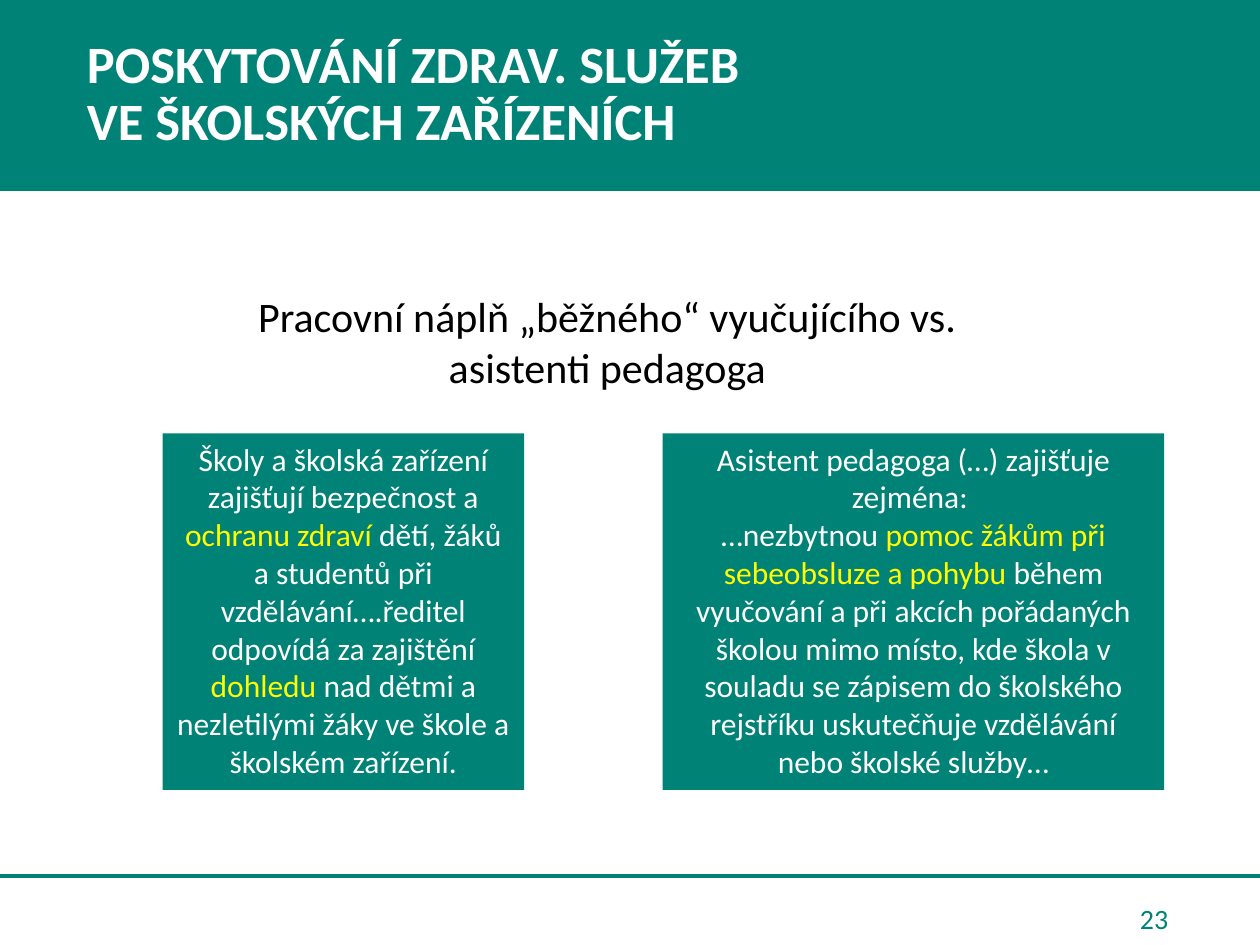
import lxml.etree
import pptx
import pptx.dml.color
import pptx.enum.shapes
import pptx.enum.text
import pptx.oxml.ns
import pptx.util

PX = 9144  # EMU per px, 100 px to the inch
FONT = "Calibri"
COLORS = {"teal": "008276", "white": "FFFFFF", "black": "000000", "yellow": "FFFF00"}
ALIGN = pptx.enum.text.PP_ALIGN
ANCHOR = pptx.enum.text.MSO_ANCHOR
AUTO = pptx.enum.text.MSO_AUTO_SIZE


def px(*lengths):
    return [pptx.util.Emu(n * PX) for n in lengths]


def rgb(name):
    return pptx.dml.color.RGBColor.from_string(COLORS[name])


def style(font, size, color, bold=False):
    font.name, font.size, font.bold = FONT, pptx.util.Pt(size), bold
    font.color.rgb = rgb(color)


def write(tf, paragraphs, size, align, anchor=ANCHOR.TOP):
    """Fill a text frame; each paragraph is a list of (text, colour) runs."""
    tf.word_wrap, tf.auto_size, tf.vertical_anchor = True, AUTO.NONE, anchor
    for i, runs in enumerate(paragraphs):
        p = tf.add_paragraph() if i else tf.paragraphs[0]
        p.alignment = align
        for text, color in runs:
            r = p.add_run()
            r.text = text
            style(r.font, size, color)


def add_rect(s, box):
    sp = s.shapes.add_shape(pptx.enum.shapes.MSO_SHAPE.RECTANGLE, *px(*box))
    sp.shadow.inherit = False
    sp.fill.solid()
    sp.fill.fore_color.rgb = rgb("teal")
    sp.line.fill.background()
    return sp


def add_text(s, box, text, size, color, align, anchor=ANCHOR.TOP):
    sp = s.shapes.add_textbox(*px(*box))
    write(sp.text_frame, [[(text, color)]], size, align, anchor)


def add_header(s, box, lines):
    left, top, width, height = box
    band = add_rect(s, (left, top, width + 4, height))
    band.line.color.rgb = rgb("teal")
    band.line.width = pptx.util.Pt(1)

    title = s.shapes.title
    title.left, title.top, title.width, title.height = px(*box)
    band.element.addnext(title.element)  # the title lies above the band
    tf = title.text_frame
    tf.word_wrap, tf.auto_size, tf.vertical_anchor = True, AUTO.NONE, ANCHOR.MIDDLE
    p = tf.paragraphs[0]
    p.alignment, p.line_spacing = ALIGN.LEFT, 0.9
    p._p.get_or_add_pPr().set("marL", str(59 * PX))
    for i, line in enumerate(lines):
        if i:
            p.add_line_break()
        r = p.add_run()
        r.text = line
        style(r.font, 30, "white", bold=True)
    style(p.font, 30, "white", bold=True)


def add_footer(s, box, number):
    left, top, width, height = box
    rule = s.shapes.add_connector(
        pptx.enum.shapes.MSO_CONNECTOR.STRAIGHT, *px(left, top, left + width, top))
    rule.line.color.rgb = rgb("teal")
    rule.line.width = pptx.util.Pt(2.25)
    lxml.etree.SubElement(rule._element.spPr, pptx.oxml.ns.qn("a:effectLst"))
    add_text(s, (left + 711, top + 14, 229, 40), number, 16, "teal",
             ALIGN.RIGHT, ANCHOR.MIDDLE)


def add_panel(s, box, paragraphs):
    write(add_rect(s, box).text_frame, paragraphs, 18, ALIGN.CENTER)


def main():
    prs = pptx.Presentation()
    prs.slide_width, prs.slide_height = px(1000, 750)
    s = prs.slides.add_slide(prs.slide_layouts[5])

    add_header(s, (0, 0, 1000, 151),
               ["POSKYTOVÁNÍ ZDRAV. SLUŽEB", "VE ŠKOLSKÝCH ZAŘÍZENÍCH"])
    add_footer(s, (-3, 695, 1007, 55), "23")
    add_text(s, (144, 226, 676, 91),
             "Pracovní náplň „běžného“ vyučujícího vs. asistenti pedagoga",
             24, "black", ALIGN.CENTER)
    add_panel(s, (129, 344, 287, 283), [[
        ("Školy a školská zařízení zajišťují bezpečnost a ", "white"),
        ("ochranu zdraví ", "yellow"),
        ("dětí, žáků a studentů při vzdělávání….ředitel odpovídá za zajištění ", "white"),
        ("dohledu ", "yellow"),
        ("nad dětmi a nezletilými žáky ve škole a školském zařízení.", "white"),
    ]])
    add_panel(s, (526, 344, 398, 283), [
        [("Asistent pedagoga (…) zajišťuje zejména: ", "white")],
        [("…nezbytnou ", "white"),
         ("pomoc žákům při sebeobsluze a pohybu ", "yellow"),
         ("během vyučování a při akcích pořádaných školou mimo místo, kde škola "
          "v souladu se zápisem do školského rejstříku uskutečňuje vzdělávání "
          "nebo školské služby…", "white")],
    ])
    prs.save("out.pptx")


if __name__ == "__main__":
    main()
